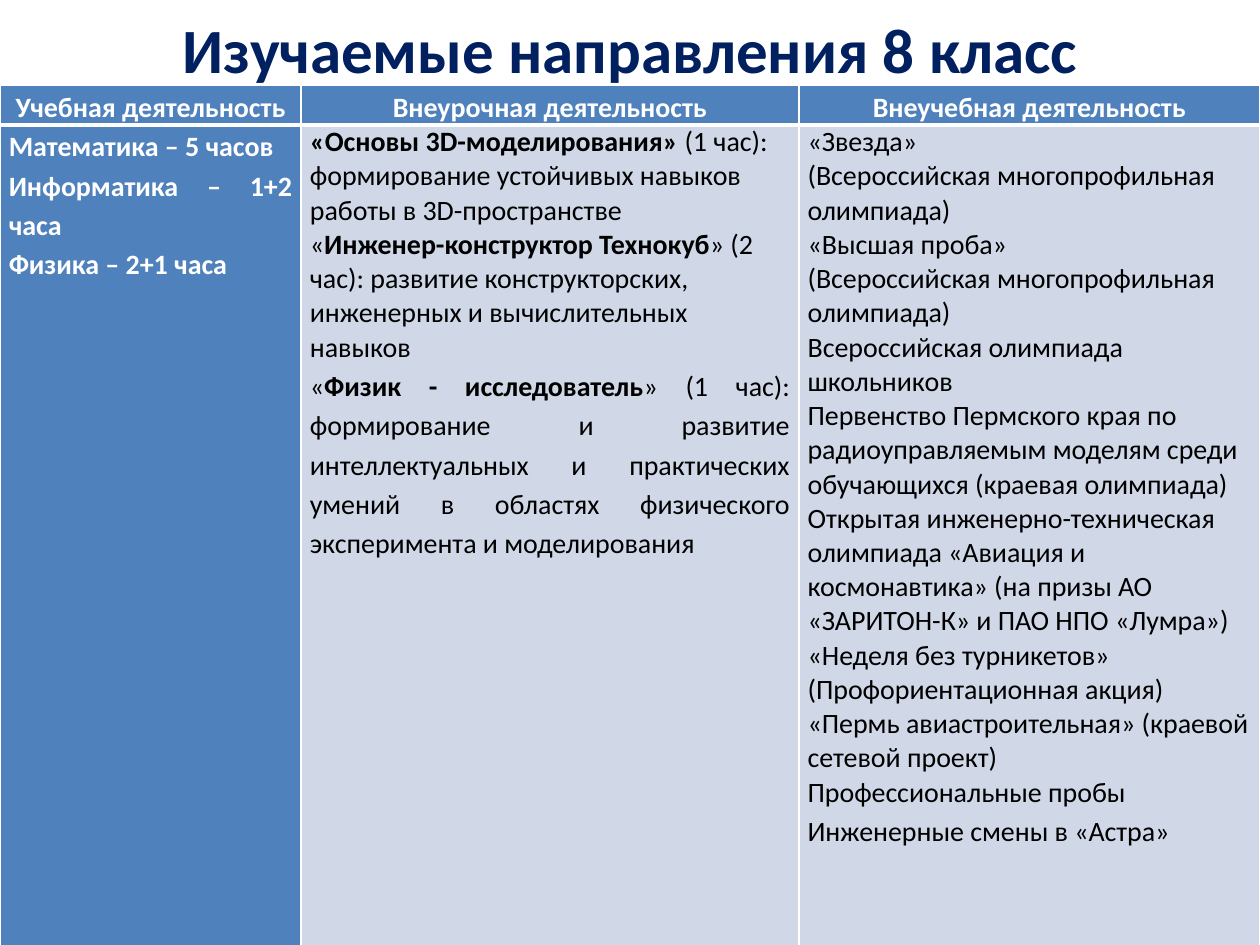
from dataclasses import dataclass

from lxml import etree
from pptx import Presentation
from pptx.dml.color import RGBColor
from pptx.enum.text import MSO_ANCHOR, PP_ALIGN
from pptx.oxml.ns import qn
from pptx.util import Inches, Pt

CENTER, JUSTIFY, LEFT = PP_ALIGN.CENTER, PP_ALIGN.JUSTIFY, PP_ALIGN.LEFT
MIDDLE = MSO_ANCHOR.MIDDLE
TITLE_ONLY = 5


@dataclass(frozen=True)
class Theme:
    """Colours, font and type sizes of the slide."""
    font: str = "Calibri"
    title: str = "002060"
    accent: str = "4F81BD"
    light: str = "D0D8E8"
    white: str = "FFFFFF"
    black: str = "000000"
    title_size: int = 36
    table_size: int = 16


THEME = Theme()

TITLE = "Изучаемые направления 8 класс"
COLUMN_WIDTHS = (2.39, 3.95, 3.66)
ROW_HEIGHTS = (0.3, 6.52)
HEADERS = ("Учебная деятельность", "Внеурочная деятельность", "Внеучебная деятельность")
SUBJECTS = ("Математика – 5 часов", "Информатика – 1+2 часа", "Физика – 2+1 часа")
COURSES = (
    (("«Основы 3D-моделирования» ", True),
     ("(1 час): формирование устойчивых навыков работы в 3D-пространстве", False)),
    (("«", False), ("Инженер-конструктор Технокуб", True),
     ("» (2 час): развитие конструкторских, инженерных и вычислительных навыков", False)),
    (("«", False), ("Физик - исследователь", True),
     ("» (1 час): формирование и развитие интеллектуальных и практических умений "
      "в областях физического эксперимента и моделирования", False)),
)
EVENTS = (
    "«Звезда»",
    "(Всероссийская многопрофильная олимпиада)",
    "«Высшая проба»",
    "(Всероссийская многопрофильная олимпиада)",
    "Всероссийская олимпиада школьников",
    "Первенство Пермского края по радиоуправляемым моделям среди обучающихся "
    "(краевая олимпиада)",
    "Открытая инженерно-техническая олимпиада «Авиация и космонавтика» "
    "(на призы АО «ЗАРИТОН-К» и ПАО НПО «Лумра»)",
    "«Неделя без турникетов»",
    "(Профориентационная акция)",
    "«Пермь авиастроительная» (краевой сетевой проект)",
    "Профессиональные пробы",
    "Инженерные смены в «Астра»",
)


def plain(lines, bold=False):
    """Turn lines of text into paragraphs of one run each."""
    return [((line, bold),) for line in lines]


def style_font(font, size, color, bold):
    """Apply the theme font with a size, colour and weight."""
    font.name = THEME.font
    font.size = Pt(size)
    font.bold = bold
    font.color.rgb = RGBColor.from_string(color)


def add_title(slide, left, top, width, height):
    """Place the title placeholder in its box."""
    title = slide.shapes.title
    title.left, title.top, title.width, title.height = left, top, width, height
    text_frame = title.text_frame
    text_frame.text = TITLE
    text_frame.vertical_anchor = MIDDLE
    paragraph = text_frame.paragraphs[0]
    paragraph.alignment = CENTER
    style_font(paragraph.runs[0].font, THEME.title_size, THEME.title, True)


def set_borders(cell, bottom_width):
    """Draw white cell borders with the given bottom width."""
    properties = cell._tc.get_or_add_tcPr()
    for side, width in (("L", 1), ("R", 1), ("T", 1), ("B", bottom_width)):
        line = etree.SubElement(properties, qn(f"a:ln{side}"), w=str(Pt(width)))
        fill = etree.SubElement(line, qn("a:solidFill"))
        etree.SubElement(fill, qn("a:srgbClr"), val=THEME.white)


def fill_cell(cell, paragraphs, fill, color, alignments, bottom_width=1):
    """Write runs into a cell, with looser spacing where text is not left-aligned."""
    set_borders(cell, bottom_width)
    cell.fill.solid()
    cell.fill.fore_color.rgb = RGBColor.from_string(fill)
    cell.margin_left = cell.margin_right = Inches(0.07)
    cell.margin_top = cell.margin_bottom = 0
    text_frame = cell.text_frame
    for index, (runs, alignment) in enumerate(zip(paragraphs, alignments)):
        paragraph = text_frame.add_paragraph() if index else text_frame.paragraphs[0]
        paragraph.alignment = alignment
        if alignment != LEFT:
            paragraph.line_spacing = 1.15
        for text, bold in runs:
            run = paragraph.add_run()
            run.text = text
            style_font(run.font, THEME.table_size, color, bold)


def add_activity_table(slide, left, top, width, height):
    """Build the table of the three kinds of activity."""
    table = slide.shapes.add_table(
        len(ROW_HEIGHTS), len(COLUMN_WIDTHS), left, top, width, height).table
    for column, column_width in zip(table.columns, COLUMN_WIDTHS):
        column.width = Inches(column_width)
    for row, row_height in zip(table.rows, ROW_HEIGHTS):
        row.height = Inches(row_height)
    for index, header in enumerate(HEADERS):
        fill_cell(table.cell(0, index), plain([header], True),
                  THEME.accent, THEME.white, [CENTER], bottom_width=3)
    fill_cell(table.cell(1, 0), plain(SUBJECTS, True),
              THEME.accent, THEME.white, [JUSTIFY] * len(SUBJECTS))
    for index, paragraphs in enumerate((COURSES, plain(EVENTS)), start=1):
        alignments = [LEFT] * (len(paragraphs) - 1) + [JUSTIFY]
        fill_cell(table.cell(1, index), paragraphs, THEME.light, THEME.black, alignments)


def main():
    """Build and save the presentation."""
    presentation = Presentation()
    presentation.slide_width, presentation.slide_height = Inches(10), Inches(7.5)
    slide = presentation.slides.add_slide(presentation.slide_layouts[TITLE_ONLY])
    add_title(slide, Inches(0.5), 0, Inches(9), Inches(0.76))
    add_activity_table(slide, 0, Inches(0.68), Inches(10), Inches(sum(ROW_HEIGHTS)))
    presentation.save("out.pptx")


if __name__ == "__main__":
    main()
